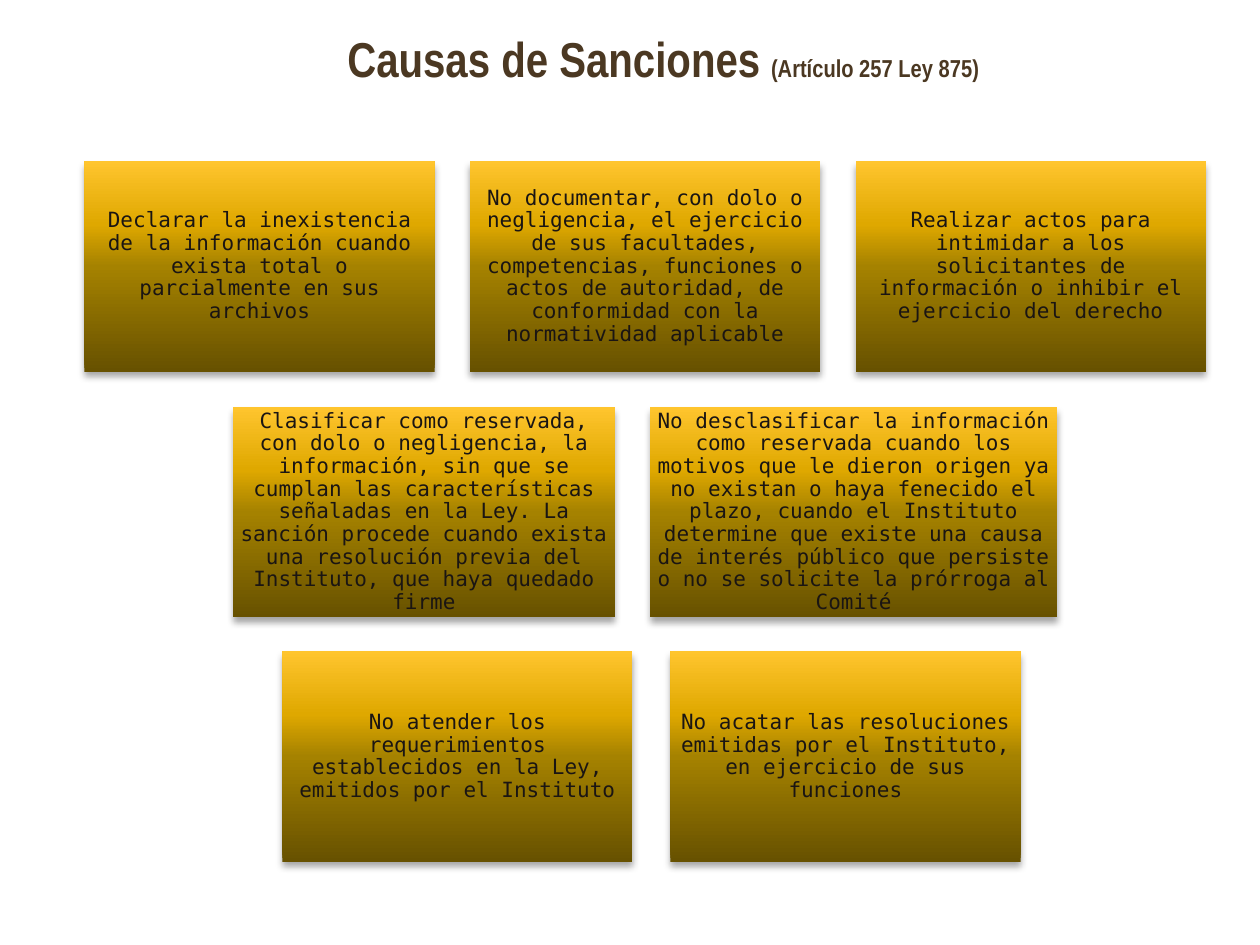
"""Build a slide listing the causes for sanctions."""
from lxml import etree
from pptx import Presentation
from pptx.dml.color import RGBColor
from pptx.enum.shapes import MSO_SHAPE
from pptx.enum.text import MSO_ANCHOR, PP_ALIGN
from pptx.oxml import parse_xml
from pptx.oxml.ns import nsdecls, qn
from pptx.util import Inches, Pt

STOPS = [(0, "675100"), (50, "A58200"), (70, "DFA800"), (100, "FFC52E")]
ROWS = [
    (0.67, 1.28, 0.28, [
        (2.78, "Declarar la inexistencia de la información cuando exista total o "
               "parcialmente en sus archivos"),
        (2.78, "No documentar, con dolo o negligencia, el ejercicio de sus facultades, "
               "competencias, funciones o actos de autoridad, de conformidad con la "
               "normatividad aplicable"),
        (2.78, "Realizar actos para intimidar a los solicitantes de información o "
               "inhibir el ejercicio del derecho"),
    ]),
    (1.85, 3.23, 0.28, [
        (3.03, "Clasificar como reservada, con dolo o negligencia, la información, sin "
               "que se cumplan las características señaladas en la Ley. La sanción "
               "procede cuando exista una resolución previa del Instituto, que haya "
               "quedado firme"),
        (3.23, "No desclasificar la información como reservada cuando los motivos que le "
               "dieron origen ya no existan o haya fenecido el plazo, cuando el Instituto "
               "determine que existe una causa de interés público que persiste o no se "
               "solicite la prórroga al Comité"),
    ]),
    (2.24, 5.17, 0.3, [
        (2.78, "No atender los requerimientos establecidos en la Ley, emitidos por el "
               "Instituto"),
        (2.78, "No acatar las resoluciones emitidas por el Instituto, en ejercicio de "
               "sus funciones"),
    ]),
]


def add_run(p, text, size, name, color, bold=False):
    r = p.add_run()
    r.text = text
    r.font.size = Pt(size)
    r.font.name = name
    r.font.bold = bold
    r.font.color.rgb = RGBColor.from_string(color)


def set_frame(tf, anchor):
    tf.word_wrap = True
    tf.vertical_anchor = anchor
    tf.margin_left = tf.margin_right = Inches(0.05)
    tf.margin_top = tf.margin_bottom = Inches(0.05)
    tf.paragraphs[0].alignment = PP_ALIGN.CENTER
    return tf.paragraphs[0]


prs = Presentation()
prs.slide_width, prs.slide_height = Inches(10), Inches(7.5)
s = prs.slides.add_slide(prs.slide_layouts[5])

title = s.shapes.title
title.left, title.top = Inches(0.83), Inches(0.15)
title.width, title.height = Inches(9), Inches(1)
p = set_frame(title.text_frame, MSO_ANCHOR.TOP)
title.text_frame.margin_top = Inches(0.08)
title.text_frame.margin_right = Inches(0.18)
add_run(p, "Causas de Sanciones ", 28, "Arial Narrow", "4B3822", True)
add_run(p, "(Artículo 257 Ley 875)", 14, "Arial Narrow", "4B3822", True)

for left, top, gap, causes in ROWS:
    for width, text in causes:
        sp = s.shapes.add_shape(MSO_SHAPE.RECTANGLE, Inches(left), Inches(top),
                                Inches(width), Inches(1.67))
        sp.line.fill.background()
        sp.fill.gradient()
        sp.fill.gradient_angle = 90
        stops = sp._element.spPr.find(qn("a:gradFill")).find(qn("a:gsLst"))
        for old in list(stops):
            stops.remove(old)
        for pos, color in STOPS:
            gs = etree.SubElement(stops, qn("a:gs"), pos=str(pos * 1000))
            etree.SubElement(gs, qn("a:srgbClr"), val=color)
        sp.shadow.inherit = False
        sp._element.spPr.find(qn("a:effectLst")).append(parse_xml(
            f'<a:outerShdw {nsdecls("a")} blurRad="{Pt(4)}" dist="{Pt(3)}" dir="5400000" '
            'rotWithShape="0"><a:srgbClr val="000000"><a:alpha val="35000"/></a:srgbClr>'
            '</a:outerShdw>'))
        p = set_frame(sp.text_frame, MSO_ANCHOR.MIDDLE)
        p.line_spacing = 0.9
        add_run(p, text, 12, "DejaVu Sans Mono", "1A1513")
        left += width + gap

prs.save("out.pptx")
